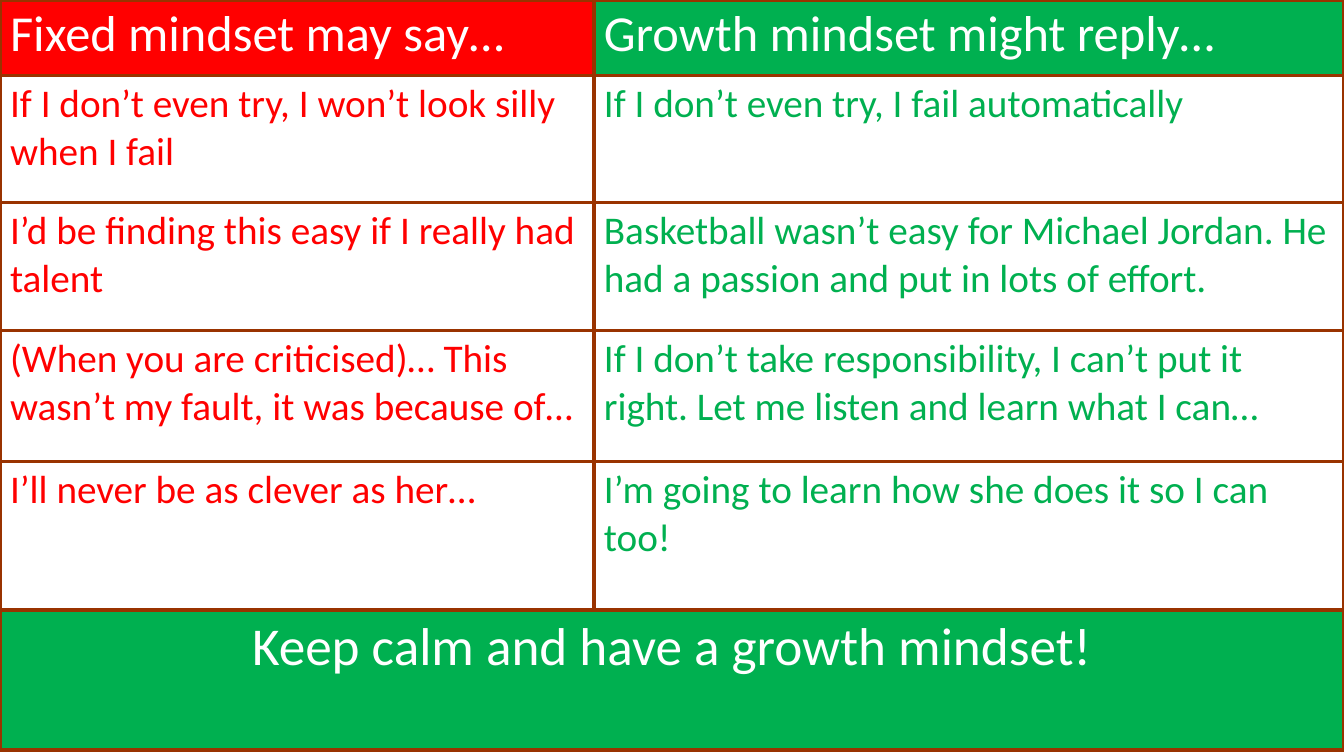
"""Build a slide comparing fixed and growth mindset replies."""
from lxml import etree
from pptx import Presentation
from pptx.dml.color import RGBColor
from pptx.enum import text
from pptx.oxml import ns
from pptx.util import Inches, Pt

HUES = {"red": "FF0000", "green": "00B050", "white": "FFFFFF", "brown": "993300"}
WIDTHS = [5.89, 7.44]
HEIGHTS = [0.75, 1.26, 1.27, 1.3, 1.47, 1.39]
HEADS = [("Fixed mindset may say…", "red"), ("Growth mindset might reply…", "green")]
PAIRS = [
    ("If I don’t even try, I won’t look silly when I fail",
     "If I don’t even try, I fail automatically"),
    ("I’d be finding this easy if I really had talent",
     "Basketball wasn’t easy for Michael Jordan. He had a passion and put in lots of effort."),
    ("(When you are criticised)… This wasn’t my fault, it was because of…",
     "If I don’t take responsibility, I can’t put it right. Let me listen and learn what I can…"),
    ("I’ll never be as clever as her…",
     "I’m going to learn how she does it so I can too!"),
]


def style(cell, fill):
    """Set the borders and fill of a cell."""
    props = cell._tc.get_or_add_tcPr()
    for side in ("a:lnL", "a:lnR", "a:lnT", "a:lnB"):
        line = etree.SubElement(props, ns.qn(side), w=str(Pt(3)))
        solid = etree.SubElement(line, ns.qn("a:solidFill"))
        etree.SubElement(solid, ns.qn("a:srgbClr"), val=HUES["brown"])
    cell.fill.solid()
    cell.fill.fore_color.rgb = RGBColor.from_string(HUES[fill])


def write(cell, words, size, hue):
    """Write one run into a cell and return its paragraph."""
    para = cell.text_frame.paragraphs[0]
    run = para.add_run()
    run.text = words
    run.font.name = "Calibri"
    run.font.size = Pt(size)
    run.font.bold = False
    run.font.color.rgb = RGBColor.from_string(HUES[hue])
    return para


deck = Presentation()
deck.slide_width, deck.slide_height = Inches(13.33), Inches(7.5)
slide = deck.slides.add_slide(deck.slide_layouts[6])
frame = slide.shapes.add_table(len(HEIGHTS), len(WIDTHS), Inches(0), Inches(0),
                               Inches(sum(WIDTHS)), Inches(sum(HEIGHTS)))
table = frame.table
for col, width in zip(table.columns, WIDTHS):
    col.width = Inches(width)
for row, height in zip(table.rows, HEIGHTS):
    row.height = Inches(height)

for c, (words, hue) in enumerate(HEADS):
    head = table.cell(0, c)
    style(head, hue)
    write(head, words, 36, "white").line_spacing = Pt(43)
    for r, pair in enumerate(PAIRS, 1):
        cell = table.cell(r, c)
        style(cell, "white")
        write(cell, pair[c], 28, hue)
    style(table.cell(len(HEIGHTS) - 1, c), "green")

foot = table.cell(len(HEIGHTS) - 1, 0)
foot.merge(table.cell(len(HEIGHTS) - 1, 1))
motto = write(foot, "Keep calm and have a growth mindset!", 38, "white")
motto.alignment = text.PP_ALIGN.CENTER

deck.save("out.pptx")
